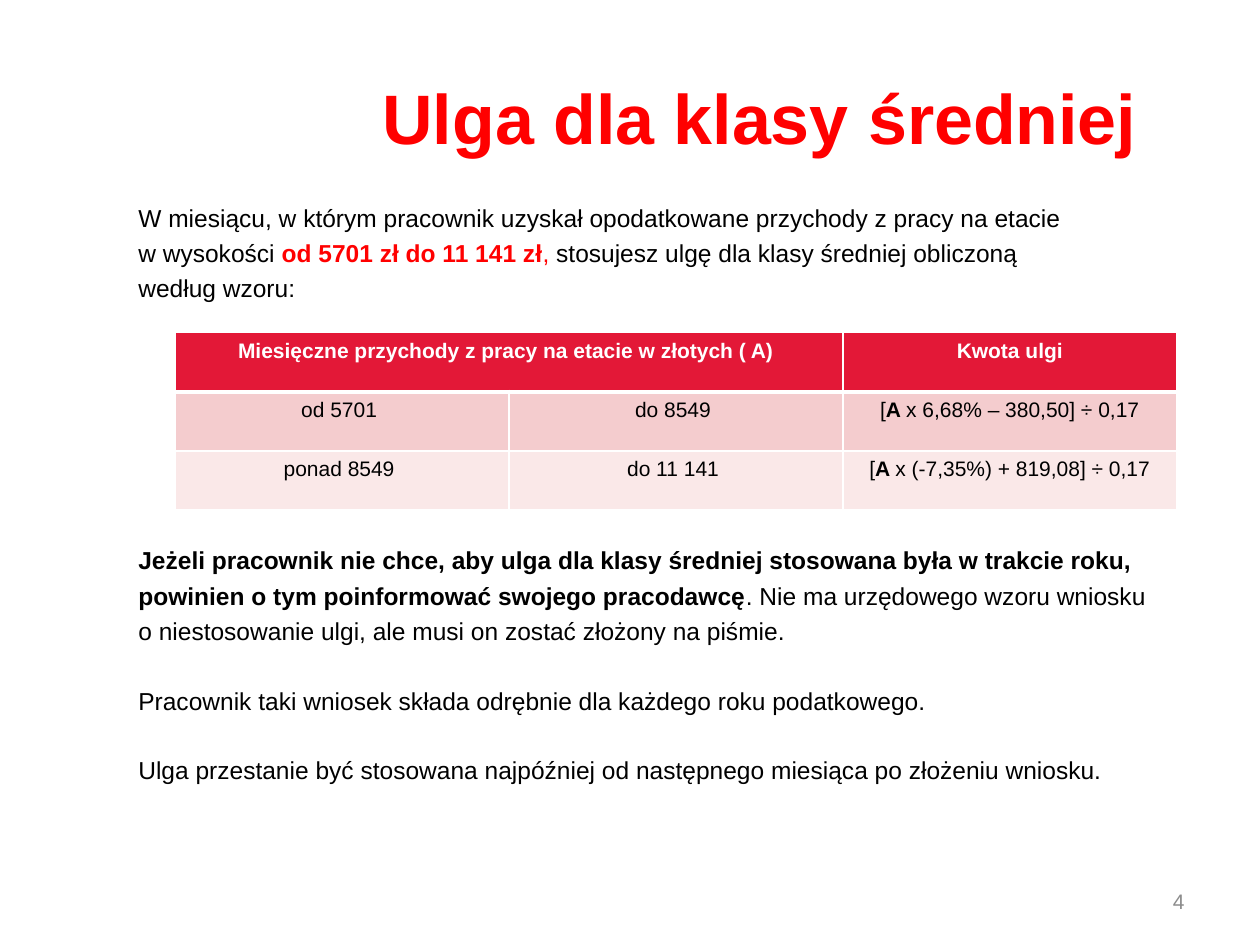
from lxml.etree import SubElement
from pptx import Presentation
from pptx.dml.color import RGBColor
from pptx.enum.text import MSO_ANCHOR as Anchor, PP_ALIGN as Align
from pptx.oxml.ns import qn
from pptx.util import Inches, Pt

RED = RGBColor(0xFF, 0x00, 0x00)
CRIMSON = RGBColor(0xE3, 0x18, 0x37)
PINK = RGBColor(0xF4, 0xCC, 0xCE)
PALE = RGBColor(0xFA, 0xE8, 0xE8)
WHITE = RGBColor(0xFF, 0xFF, 0xFF)
BLACK = RGBColor(0x00, 0x00, 0x00)
GREY = RGBColor(0x8C, 0x8C, 0x8C)

TITLE = "Ulga dla klasy średniej "
PAGE = "4"
BOLD, ACCENT, ACCENT_BOLD = (True, None), (None, RED), (True, RED)
PLAIN = (None, None)
LINE_GAP, SECTION_GAP = 3.4, 23

INTRO = [
    (LINE_GAP, [("W miesiącu, w którym pracownik uzyskał opodatkowane przychody z pracy na etacie", PLAIN)]),
    (LINE_GAP, [("w wysokości ", PLAIN), ("od 5701 zł do 11 141 zł", ACCENT_BOLD), (", ", ACCENT),
                ("stosujesz ulgę dla klasy średniej obliczoną", PLAIN)]),
    (LINE_GAP, [("według wzoru:", PLAIN)]),
]
NOTES = [
    (LINE_GAP, [("Jeżeli pracownik nie chce, aby ulga dla klasy średniej stosowana była w trakcie roku,", BOLD)]),
    (LINE_GAP, [("powinien o tym poinformować swojego pracodawcę", BOLD),
                (". Nie ma urzędowego wzoru wniosku", PLAIN)]),
    (LINE_GAP, [("o niestosowanie ulgi, ale musi on zostać złożony na piśmie.", PLAIN)]),
    (SECTION_GAP, [("Pracownik taki wniosek składa odrębnie dla każdego roku podatkowego.", PLAIN)]),
    (SECTION_GAP, [("Ulga przestanie być stosowana najpóźniej od następnego miesiąca po złożeniu wniosku.", PLAIN)]),
]
INCOME = "Miesięczne przychody z pracy na etacie w złotych ( A) "
ROWS = [
    (CRIMSON, WHITE, [[(INCOME, BOLD)], [], [("Kwota ulgi", BOLD)]]),
    (PINK, BLACK, [[("od 5701 ", PLAIN)], [("do 8549 ", PLAIN)],
                   [("[", PLAIN), ("A ", BOLD), ("x 6,68% – 380,50] ÷ 0,17", PLAIN)]]),
    (PALE, BLACK, [[("ponad 8549 ", PLAIN)], [("do 11 141 ", PLAIN)],
                   [("[", PLAIN), ("A ", BOLD), ("x (-7,35%) + 819,08] ÷ 0,17", PLAIN)]]),
]
COLUMN_WIDTH, ROW_HEIGHT = 2.65, 0.47


def write(paragraph, runs, size, color, align=Align.LEFT):
    """Fill a paragraph with runs and format it."""
    paragraph.alignment = align
    font = paragraph.font
    font.name, font.size, font.color.rgb = "Arial", Pt(size), color
    for text, (bold, run_color) in runs:
        run = paragraph.add_run()
        run.text = text
        run.font.bold = bold
        if run_color is not None:
            run.font.color.rgb = run_color


def add_text(slide, box, paragraphs, size, color, align=Align.LEFT):
    """Add a wrapping text box and return its frame."""
    frame = slide.shapes.add_textbox(*map(Inches, box)).text_frame
    frame.word_wrap = True
    for index, (gap, runs) in enumerate(paragraphs):
        paragraph = frame.add_paragraph() if index else frame.paragraphs[0]
        if index:
            paragraph.space_before = Pt(gap)
        write(paragraph, runs, size, color, align)
    return frame


def add_borders(cell, widths):
    """Draw white borders of the given point widths around a cell."""
    properties = cell._tc.get_or_add_tcPr()
    for side, width in zip("LRTB", widths):
        line = SubElement(properties, qn(f"a:ln{side}"), w=str(Pt(width)))
        SubElement(SubElement(line, qn("a:solidFill")), qn("a:srgbClr"), val=str(WHITE))


def add_relief_table(slide, left, top):
    """Add the table of income ranges and relief formulas."""
    count = len(ROWS)
    columns = len(ROWS[0][2])
    table = slide.shapes.add_table(count, columns, Inches(left), Inches(top),
                                   Inches(COLUMN_WIDTH * columns), Inches(ROW_HEIGHT * count)).table
    for row, (fill, color, cells) in enumerate(ROWS):
        for column, runs in enumerate(cells):
            cell = table.cell(row, column)
            add_borders(cell, (1, 1, 3 if row == 1 else 1, 3 if row == 0 else 1))
            cell.fill.solid()
            cell.fill.fore_color.rgb = fill
            write(cell.text_frame.paragraphs[0], runs, 12, color, Align.CENTER)
    table.cell(0, 0).merge(table.cell(0, 1))


def main():
    """Build the slide and save it."""
    presentation = Presentation()
    presentation.slide_width, presentation.slide_height = Inches(10), Inches(7.5)
    slide = presentation.slides.add_slide(presentation.slide_layouts[5])
    title = slide.shapes.title
    title.left, title.top, title.width, title.height = map(Inches, (2.71, 0.3, 6.79, 1.25))
    title.text_frame.vertical_anchor = Anchor.MIDDLE
    write(title.text_frame.paragraphs[0], [(TITLE, BOLD)], 40, RED, Align.CENTER)
    add_text(slide, (1, 1.56, 9, 0.95), INTRO, 14, BLACK)
    add_text(slide, (1, 4.28, 9, 2.1), NOTES, 14, BLACK)
    page = add_text(slide, (7.17, 6.95, 2.33, 0.4), [(0, [(PAGE, PLAIN)])], 12, GREY, Align.RIGHT)
    page.vertical_anchor = Anchor.MIDDLE
    add_relief_table(slide, 1.39, 2.64)
    presentation.save("out.pptx")


if __name__ == "__main__":
    main()
